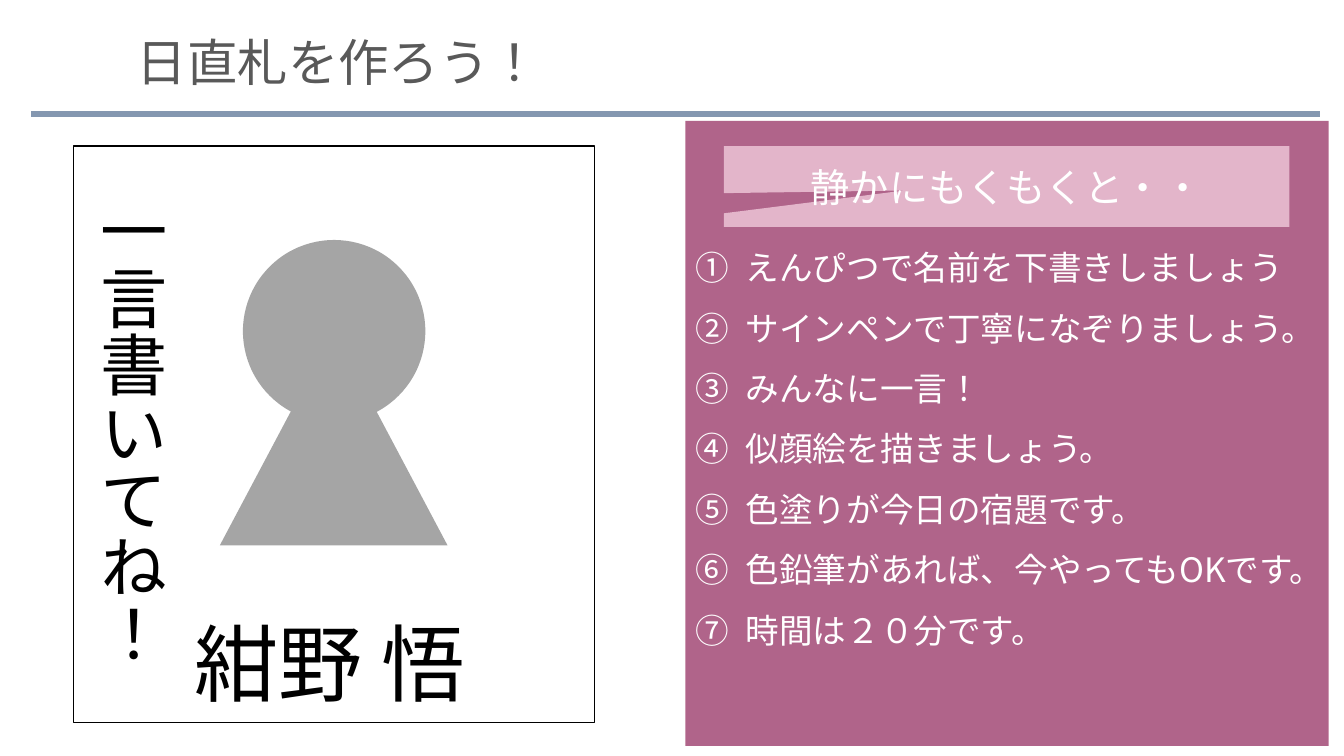
from lxml.etree import SubElement
from pptx import Presentation
from pptx.dml.color import RGBColor
from pptx.enum.lang import MSO_LANGUAGE_ID as LANGUAGE
from pptx.enum.shapes import MSO_CONNECTOR, MSO_SHAPE as SHAPE
from pptx.enum.text import MSO_ANCHOR as ANCHOR, MSO_AUTO_SIZE as FIT, PP_ALIGN as ALIGN
from pptx.oxml.ns import qn
from pptx.util import Pt

FONT = "Noto Sans CJK JP"
WHITE, BLACK, GREY = "FFFFFF", "000000", "A5A5A5"
STEPS = [
    "えんぴつで名前を下書きしましょう",
    "サインペンで丁寧になぞりましょう。",
    "みんなに一言！",
    "似顔絵を描きましょう。",
    "色塗りが今日の宿題です。",
    "色鉛筆があれば、今やってもOKです。",
    "時間は２０分です。",
]


def paint(color_format, color):
    color_format.rgb = RGBColor.from_string(color)


def set_all(target, values):
    for name, value in values.items():
        setattr(target, name, value)


def add_block(slide, kind, box, fill, opacity=100, outline=None):
    block = slide.shapes.add_shape(kind, *map(Pt, box))
    block.shadow.inherit = False
    block.fill.solid()
    paint(block.fill.fore_color, fill)
    if opacity < 100:
        tint = block.fill._xPr.find(qn("a:solidFill"))[0]
        SubElement(tint, qn("a:alpha"), val=str(opacity * 1000))
    if outline:
        block.line.width = Pt(1)
        paint(block.line.color, outline)
    else:
        block.line.fill.background()
    return block


def write(paragraph, words, size, color, **layout):
    set_all(paragraph, layout)
    run = paragraph.add_run()
    run.text = words
    set_all(run.font, {"size": Pt(size), "name": FONT, "language_id": LANGUAGE.JAPANESE})
    paint(run.font.color, color)
    SubElement(run.font._element, qn("a:ea"), typeface=FONT)


def add_label(slide, box, words, size, color, wrap=False, vertical=False):
    frame = slide.shapes.add_textbox(*map(Pt, box)).text_frame
    set_all(frame, {"word_wrap": wrap, "auto_size": FIT.SHAPE_TO_FIT_TEXT})
    if vertical:
        frame._txBody.bodyPr.set("vert", "eaVert")
    write(frame.paragraphs[0], words, size, color)


def add_rule(slide, left, right, y, color, width):
    rule = slide.shapes.add_connector(
        MSO_CONNECTOR.STRAIGHT, Pt(left), Pt(y), Pt(right), Pt(y))
    rule.line.width = Pt(width)
    paint(rule.line.color, color)
    SubElement(rule._element.spPr, qn("a:effectLst"))


def add_steps(panel, steps):
    """Fill the panel with circled-number steps below the callout."""
    frame = panel.text_frame
    set_all(frame, {"vertical_anchor": ANCHOR.TOP, "margin_top": Pt(75.6)})
    for index, step in enumerate(steps):
        paragraph = frame.add_paragraph() if index else frame.paragraphs[0]
        write(paragraph, step, 24, WHITE, alignment=ALIGN.LEFT, line_spacing=1.5)
        numbering = paragraph._p.get_or_add_pPr()
        numbering.set("marL", str(Pt(36)))
        numbering.set("indent", str(-Pt(36)))
        SubElement(numbering, qn("a:buFont"), typeface="+mj-lt")
        SubElement(numbering, qn("a:buAutoNum"), type="circleNumDbPlain")


def add_callout(slide, box, words):
    callout = add_block(slide, SHAPE.RECTANGULAR_CALLOUT, box, "F0CADB", 80)
    callout.adjustments[0], callout.adjustments[1] = -0.18, 0.05
    callout.text_frame.vertical_anchor = ANCHOR.MIDDLE
    write(callout.text_frame.paragraphs[0], words, 28, WHITE, alignment=ALIGN.CENTER)


def main():
    deck = Presentation()
    set_all(deck, {"slide_width": Pt(960), "slide_height": Pt(540)})
    slide = deck.slides.add_slide(deck.slide_layouts[6])

    add_label(slide, (90.7, 18.7, 844.6, 51.1), "日直札を作ろう！", 36, "595959", wrap=True)
    panel = add_block(slide, SHAPE.RECTANGLE, (489.6, 86.4, 459.4, 446.4), "A34976", 85)
    add_steps(panel, STEPS)
    add_callout(slide, (517, 104.4, 403.9, 57.6), "静かにもくもくと・・")

    add_block(slide, SHAPE.RECTANGLE, (52.6, 104.4, 372.2, 411.8), WHITE, outline=BLACK)
    add_label(slide, (131.8, 433.4, 213.8, 79.9), "紺野 悟", 60, BLACK)
    add_label(slide, (54, 133.9, 72.7, 346.3), "一言書いてね！", 48, BLACK, vertical=True)
    add_rule(slide, 22.3, 943.2, 81.4, "8497B0", 4.5)
    add_block(slide, SHAPE.OVAL, (173.5, 171.4, 130.3, 130.3), GREY)
    add_block(slide, SHAPE.ISOSCELES_TRIANGLE, (157, 236.2, 162.7, 153.4), GREY)

    deck.save("out.pptx")


if __name__ == "__main__":
    main()
